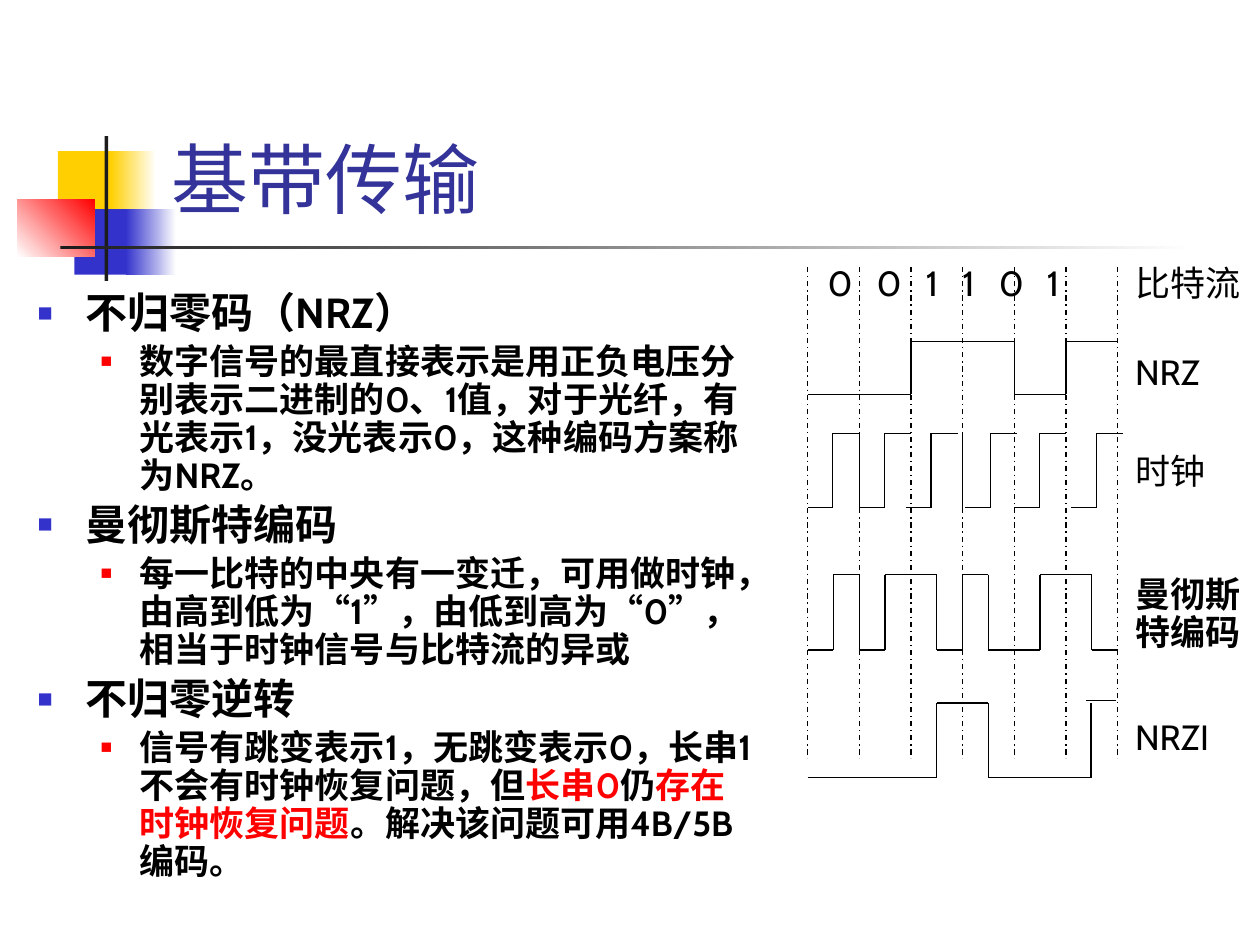
from lxml import etree
from pptx import Presentation
from pptx import util as u
from pptx.dml.color import RGBColor
from pptx.enum import dml, shapes, text
from pptx.oxml.ns import qn

BLACK = RGBColor(0, 0, 0)
WHITE = RGBColor(255, 255, 255)
DARK = RGBColor(0x1C, 0x1C, 0x1C)
GOLD = RGBColor(0xFF, 0xCF, 0x01)
BLUE = RGBColor(0x33, 0x33, 0xCC)
NAVY = RGBColor(0x33, 0x33, 0x99)
RED = RGBColor(0xFF, 0, 0)

# Corner decoration: left, top, width, height, colours, angle
DECOR = [
    (0.46, 1.2, 0.48, 0.52, [GOLD], 0),
    (0.88, 1.2, 0.36, 0.52, [GOLD, WHITE], 0),
    (0.59, 1.66, 0.46, 0.52, [BLUE], 0),
    (1, 1.66, 0.4, 0.52, [BLUE, WHITE], 0),
    (0.14, 1.58, 0.61, 0.46, [WHITE, RED], 45),
    (0.83, 1.08, 0.03, 1.15, [DARK], 0),
    (0.48, 1.95, 9, 0.03, [DARK, WHITE], 0),
]

# Body: level, then runs of (text, changes)
ARIAL = {"font": "Arial"}
HOT = {"color": RED}
BODY = [
    (0, [("不归零码（NRZ）", {})]),
    (1, [("数字信号的最直接表示是用正负电压分别表示二进制的0、1值，对于光纤，"
          "有光表示1，没光表示0，这种编码方案称为NRZ。", {})]),
    (0, [("曼彻斯特编码", {})]),
    (1, [("每一比特的中央有一变迁，可用做时钟，由高到低为", {}), ("“", ARIAL),
         ("1", {}), ("”", ARIAL), ("，由低到高为", {}), ("“", ARIAL), ("0", {}),
         ("”，相当于时钟信号与比特流的异或", ARIAL)]),
    (0, [("不归零逆转", {})]),
    (1, [("信号有跳变表示1，无跳变表示0，长串1不会有时钟恢复问题，但", {}),
         ("长串0", HOT), ("仍", {}), ("存在时钟恢复问题", HOT),
         ("。解决该问题可用4B/5B编码。", {})]),
]
# Per level: text size, left margin, hanging indent, bullet colour, bullet size %
LEVELS = [(24, 0.38, 0.38, BLUE, 60), (20, 0.81, 0.31, RED, 55)]

# Signal names: top, height, text, bold
NAMES = [
    (2.03, 0.44, "比特流", False),
    (2.73, 0.44, "NRZ", False),
    (3.52, 0.44, "时钟", False),
    (4.53, 0.71, "曼彻斯特编码", True),
    (5.63, 0.44, "NRZI", False),
]
BITS = "001101"
TABS = [0.39, 0.78, 1.07, 1.36, 1.74]

# Waves: high y, low y, levels (one letter per half bit, one group per stroke)
LEFT, BIT = 6.41, 0.41
WAVES = [
    (2.71, 3.13, "LLLL HHHH LL HH"),
    (4.56, 5.16, "L H L H H L H L L H H L"),
    (5.58, 6.17, "LLLL L HH LLLL"),
]
CLOCK = [6.41, 6.82, 7.19, 7.66, 8.05, 8.5]
HIGH, LOW = 3.44, 4.03
EXTRA = [
    (6.82, HIGH, 6.82, LOW), (7.64, HIGH, 7.64, LOW),  # clock falls
    (8.66, 6.17, 8.66, 5.58), (8.62, 5.56, 8.86, 5.56),  # last NRZI step
]

prs = Presentation()
prs.slide_width, prs.slide_height = u.Inches(10), u.Inches(7.5)
slide = prs.slides.add_slide(prs.slide_layouts[6])


def inch(*nums):
    return [u.Inches(n) for n in nums]


def add_run(par, words, size=20, color=BLACK, font="Cabin", bold=False):
    run = par.add_run()
    run.text = words
    run.font.size = u.Pt(size)
    run.font.name = font
    run.font.bold = bold
    run.font.color.rgb = color


def add_box(left, top, width, height, grow=True):
    frame = slide.shapes.add_textbox(*inch(left, top, width, height)).text_frame
    frame.word_wrap = True
    if grow:
        frame.auto_size = text.MSO_AUTO_SIZE.SHAPE_TO_FIT_TEXT
    return frame


def add_sub(node, tag, **attrs):
    return etree.SubElement(node, qn(tag), **attrs)


def add_line(x1, y1, x2, y2, dash=None):
    line = slide.shapes.add_connector(
        shapes.MSO_CONNECTOR.STRAIGHT, *inch(x1, y1, x2, y2))
    line.line.color.rgb = BLACK
    line.line.width = u.Pt(0.75)
    if dash:
        line.line.dash_style = dash
    add_sub(line._element.spPr, "a:effectLst")


# Decoration
for left, top, width, height, tones, angle in DECOR:
    part = slide.shapes.add_shape(
        shapes.MSO_SHAPE.RECTANGLE, *inch(left, top, width, height))
    part.shadow.inherit = False
    part.line.fill.background()
    if len(tones) == 1:
        part.fill.solid()
        part.fill.fore_color.rgb = tones[0]
    else:
        part.fill.gradient()
        part.fill.gradient_angle = angle
        for stop, tone in zip(part.fill.gradient_stops, tones):
            stop.color.rgb = tone

# Title
title = add_box(1.26, 0.23, 8.52, 1.6, grow=False)
title.vertical_anchor = text.MSO_ANCHOR.BOTTOM
add_run(title.paragraphs[0], "基带传输", size=44, color=NAVY)

# Bulleted body
body = add_box(0.2, 2.27, 5.89, 5.11, grow=False)
for i, (level, runs) in enumerate(BODY):
    size, margin, hang, tone, scale = LEVELS[level]
    par = body.add_paragraph() if i else body.paragraphs[0]
    par.level = level
    par.line_spacing = 0.9
    par.space_before = u.Pt(size * 0.2)
    props = par._p.get_or_add_pPr()
    props.set("marL", str(u.Inches(margin)))
    props.set("indent", str(-u.Inches(hang)))
    add_sub(add_sub(props, "a:buClr"), "a:srgbClr", val=str(tone))
    add_sub(props, "a:buSzPct", val=str(scale * 1000))
    add_sub(props, "a:buFont", typeface="Arial")
    add_sub(props, "a:buChar", char="■")
    for words, change in runs:
        add_run(par, words, size=size, bold=True, **change)

# Bit values on tab stops
par = add_box(6.47, 2.03, 2.6, 0.56).paragraphs[0]
stops = add_sub(par._p.get_or_add_pPr(), "a:tabLst")
for tab in TABS:
    add_sub(stops, "a:tab", pos=str(u.Inches(tab)), algn="l")
add_run(par, "\t".join(BITS))

# Signal names
for top, height, words, bold in NAMES:
    par = add_box(8.91, top, 1.09, height).paragraphs[0]
    if bold:
        par.line_spacing = 0.9
    add_run(par, words, bold=bold)

# Bit borders
for i in range(len(BITS) + 1):
    x = LEFT + i * BIT
    add_line(x, 2.12, x, 6.02, dash=dml.MSO_LINE.DASH_DOT)

# Waves
for high, low, groups in WAVES:
    x, last = LEFT, None
    for group in groups.split():
        y = high if group[0] == "H" else low
        if last not in (None, y):
            add_line(x, last, x, y)
        end = x + len(group) * BIT / 2
        add_line(x, y, end, y)
        x, last = end, y

# Clock ticks and loose strokes
for x in CLOCK:
    mid = x + 0.2
    add_line(x, LOW, mid, LOW)
    add_line(mid, LOW, mid, HIGH)
    add_line(mid, HIGH, x + BIT, HIGH)
for ends in EXTRA:
    add_line(*ends)

prs.save("out.pptx")
